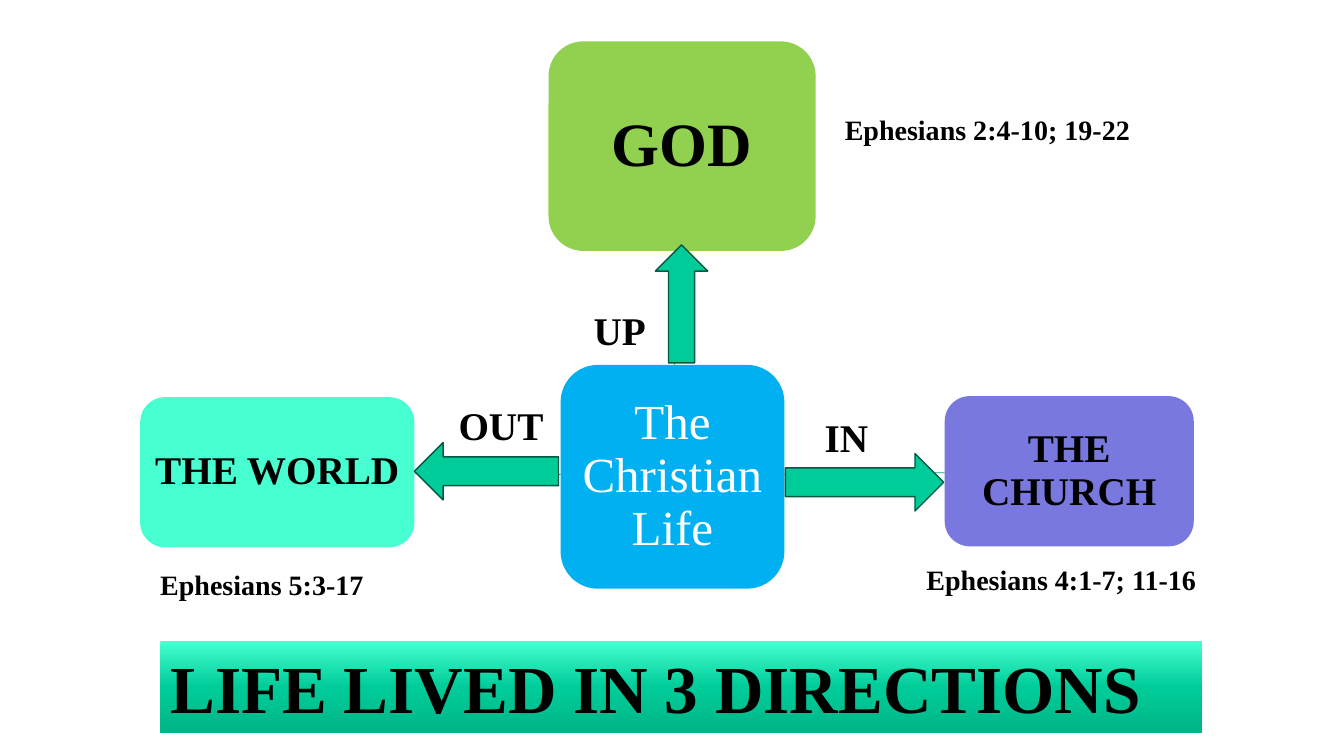
import copy
import pptx
import pptx.util
import pptx.dml.color
import pptx.enum.shapes
import pptx.enum.text
import pptx.oxml.ns
from lxml import etree

# Content: positions are (column, row, columns, rows) on a grid of one-inch cells
COLORS = {"hub": "00B0F0", "god": "92D050", "church": "7878DE", "world": "47FFD1",
          "arrow": "00CC99", "arrow_edge": "005943", "link": "00A37B",
          "black": "000000", "white": "FFFFFF"}
FONT = "Times New Roman"
TITLE = ("LIFE LIVED IN 3 DIRECTIONS", (1.59, 6.36, 10.33, 0.91), 48)
BANNER_STOPS = [(0, "47FFD1"), (50, "00CC99"), (100, "00B588")]
BOXES = {  # name: text, cell, inset, size, colour, bold
    "hub": ("The Christian Life", (5.56, 3.62, 2.22, 2.22), 0.08, 35, "white", False),
    "god": ("GOD", (5.44, 0.41, 2.65, 2.08), 0.12, 44, "black", True),
    "church": ("THE CHURCH", (9.37, 3.93, 2.47, 1.49), 0.06, 28, "black", True),
    "world": ("THE WORLD", (1.39, 3.94, 2.72, 1.49), 0.06, 28, "black", True),
}
LINKS = [("god", (0.51, 0), (0.49, 1)), ("church", (1, 0.49), (0, 0.51)),
         ("world", (0, 0.49), (1, 0.51))]  # target, share of hub, share of target
ARROWS = [((6.5, 2.43, 0.52, 1.17), 0), ((4.54, 3.96, 0.57, 1.43), 270),
          ((8.29, 4, 0.57, 1.57), 90)]
LABELS = [
    ("UP", (5.79, 2.99, 0.88, 0.58), 28),
    ("IN", (8.08, 4.05, 0.88, 0.58), 28),
    ("OUT", (4.45, 3.93, 1.16, 0.57), 28),
    ("Ephesians 2:4-10; 19-22", (8.28, 1.07, 3.15, 0.44), 20),
    ("Ephesians 4:1-7; 11-16", (9.09, 5.53, 3.15, 0.44), 20),
    ("Ephesians 5:3-17", (1.49, 5.58, 3.15, 0.44), 20),
]

prs = pptx.Presentation()
prs.slide_width, prs.slide_height = pptx.util.Inches(13.33), pptx.util.Inches(7.5)
s = prs.slides.add_slide(prs.slide_layouts[5])
SHAPE = pptx.enum.shapes.MSO_SHAPE
ALIGN = pptx.enum.text.PP_ALIGN
ANCHOR = pptx.enum.text.MSO_ANCHOR


def rgb(name):
    return pptx.dml.color.RGBColor.from_string(COLORS[name])


def grid(cell):
    return [pptx.util.Inches(v) for v in cell]


def set_all(obj, values):
    for name, value in values.items():
        setattr(obj, name, value)


def write(sp, text, size, color="black", bold=True, align=ALIGN.LEFT,
          anchor=ANCHOR.TOP, inset=(0.1, 0.05), spacing=1.0):
    tf = sp.text_frame
    dx, dy = grid(inset)
    set_all(tf, {"word_wrap": True, "auto_size": pptx.enum.text.MSO_AUTO_SIZE.NONE,
                 "vertical_anchor": anchor, "margin_left": dx, "margin_right": dx,
                 "margin_top": dy, "margin_bottom": dy})
    p = tf.paragraphs[0]
    set_all(p, {"alignment": align, "line_spacing": spacing})
    r = p.add_run()
    r.text = text
    set_all(r.font, {"name": FONT, "size": pptx.util.Pt(size), "bold": bold})
    r.font.color.rgb = rgb(color)


def add_filled(kind, cell, color):
    sp = s.shapes.add_shape(kind, *grid(cell))
    sp.shadow.inherit = False
    sp.fill.solid()
    sp.fill.fore_color.rgb = rgb(color)
    sp.line.fill.background()
    return sp


def point(box, share):
    x, y, w, h = BOXES[box][1]
    return grid((x + w * share[0], y + h * share[1]))


# Banner title with a three-stop vertical gradient
text, cell, size = TITLE
title = s.shapes.title
set_all(title, dict(zip(("left", "top", "width", "height"), grid(cell))))
write(title, text, size)
title.fill.gradient()
title.fill.gradient_angle = 270
gs_list = title.element.spPr.find(".//" + pptx.oxml.ns.qn("a:gsLst"))
gs_list.append(copy.deepcopy(gs_list[0]))
for stop, (position, color) in zip(title.fill.gradient_stops, BANNER_STOPS):
    stop.position = position / 100
    stop.color.rgb = pptx.dml.color.RGBColor.from_string(color)

# Thin links from the hub, then the boxes
for target, start, end in LINKS:
    cn = s.shapes.add_connector(pptx.enum.shapes.MSO_CONNECTOR.STRAIGHT,
                                *point("hub", start), *point(target, end))
    cn.line.color.rgb = rgb("link")
    cn.line.width = pptx.util.Pt(0.5)
    etree.SubElement(cn.element.spPr, pptx.oxml.ns.qn("a:effectLst"))

for name, (text, cell, inset, size, color, bold) in BOXES.items():
    sp = add_filled(SHAPE.ROUNDED_RECTANGLE, cell, name)
    write(sp, text, size, color, bold, ALIGN.CENTER, ANCHOR.MIDDLE, (inset, inset), 0.9)

# Block arrows
for cell, rotation in ARROWS:
    sp = add_filled(SHAPE.UP_ARROW, cell, "arrow")
    sp.rotation = rotation
    sp.line.color.rgb = rgb("arrow_edge")
    sp.line.width = pptx.util.Pt(1)

# Direction labels and references
for text, cell, size in LABELS:
    write(s.shapes.add_textbox(*grid(cell)), text, size)

prs.save("out.pptx")
